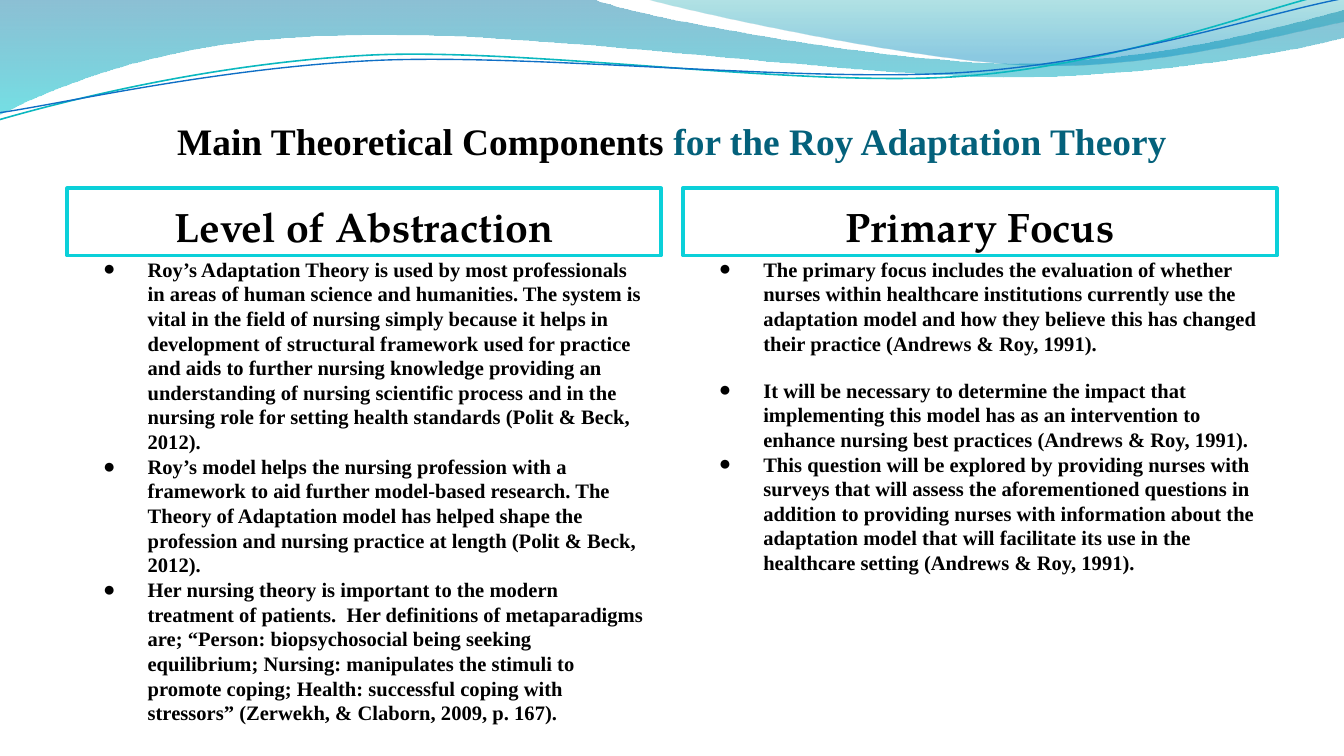
from lxml import etree
from pptx import Presentation
from pptx.dml.color import RGBColor
from pptx.enum.shapes import MSO_SHAPE
from pptx.enum.text import MSO_ANCHOR, PP_ALIGN
from pptx.oxml.ns import qn
from pptx.util import Cm, Pt

RECTANGLE = MSO_SHAPE.RECTANGLE
CENTER = PP_ALIGN.CENTER
LEFT = PP_ALIGN.LEFT
TOP = MSO_ANCHOR.TOP
MIDDLE = MSO_ANCHOR.MIDDLE

SERIF = "Times New Roman"
DISPLAY = "TeX Gyre Pagella"
BLACK, WHITE, TITLE_BLUE, FRAME = "000000", "FFFFFF", "04617B", "0BD0D9"
INSET = 0.25

# Each wave is a start point, then segments: one point is a straight line,
# three points are a Bézier curve. All in centimetres.
BACK_WAVE = [
    [(0, 0)],
    [(11.18, -0.03)],
    [(12.09, 0.33), (16.87, 1.19), (19.25, 1.19)],
    [(21.67, 1.19), (24.33, 0.48), (25.4, 0.18)],
    [(25.43, 0.69)],
    [(24.97, 0.84), (22.1, 1.45), (18.95, 1.45)],
    [(15.8, 1.42), (9.7, 0.53), (6.53, 0.66)],
    [(3.28, 0.69), (1.17, 1.57), (-0.03, 2.16)],
]
FRONT_WAVE = [
    [(12.17, -0.03)],
    [(12.93, 0.2), (17.32, 1.17), (19.53, 1.24)],
    [(21.74, 1.32), (24.41, 0.61), (25.4, 0.41)],
    [(25.4, 0)],
]
TEAL_LINE = [
    [(0, 2.26)],
    [(1.22, 1.91), (4.01, 1.19), (7.04, 1.04)],
    [(10.06, 0.91), (15.04, 1.65), (18.08, 1.45)],
    [(21.16, 1.24), (23.85, 0.15), (25.35, -0.18)],
]
BLUE_LINE = [
    [(0, 2.13)],
    [(1.19, 1.96), (4.17, 1.27), (7.19, 1.14)],
    [(10.24, 1.02), (15.16, 1.57), (18.21, 1.37)],
    [(21.23, 1.17), (23.9, 0.25), (25.4, -0.03)],
]

# Each point is its text and the space before it in points.
COLUMNS = [
    ("Level of Abstraction", [
        ("Roy’s Adaptation Theory is used by most professionals in areas of human science and "
         "humanities. The system is vital in the field of nursing simply because it helps in "
         "development of structural framework used for practice and aids to further nursing "
         "knowledge providing an understanding of nursing scientific process and in the nursing "
         "role for setting health standards (Polit & Beck, 2012).", 0),
        ("Roy’s model helps the nursing profession with a framework to aid further model-based "
         "research. The Theory of Adaptation model has helped shape the profession and nursing "
         "practice at length (Polit & Beck, 2012).", 0),
        ("Her nursing theory is important to the modern treatment of patients.  Her definitions "
         "of metaparadigms are; “Person: biopsychosocial being seeking equilibrium; Nursing: "
         "manipulates the stimuli to promote coping; Health: successful coping with stressors” "
         "(Zerwekh, & Claborn, 2009, p. 167).", 0),
    ]),
    ("Primary Focus", [
        ("The primary focus includes the evaluation of whether nurses within healthcare "
         "institutions currently use the adaptation model and how they believe this has changed "
         "their practice (Andrews & Roy, 1991).", 0),
        ("It will be necessary to determine the impact that implementing this model has as an "
         "intervention to enhance nursing best practices (Andrews & Roy, 1991).", 12),
        ("This question will be explored by providing nurses with surveys that will assess the "
         "aforementioned questions in addition to providing nurses with information about the "
         "adaptation model that will facilitate its use in the healthcare setting "
         "(Andrews & Roy, 1991).", 0),
    ]),
]


def rgb(color):
    return RGBColor.from_string(color)


def add_outline(slide, left, top, segments, close):
    """Draw the segments as straight lines, then join each triple into a Bézier curve."""
    points = [(Cm(left + x), Cm(top + y)) for segment in segments for x, y in segment]
    builder = slide.shapes.build_freeform(*points[0], scale=1.0)
    builder.add_line_segments(points[1:], close=close)
    shape = builder.convert_to_shape()
    shape.shadow.inherit = False
    lines = list(shape.element.iter(qn("a:lnTo")))
    for segment in segments[1:]:
        steps, lines = lines[:len(segment)], lines[len(segment):]
        if len(segment) == 3:
            curve = etree.Element(qn("a:cubicBezTo"))
            steps[0].addprevious(curve)
            for step in steps:
                curve.append(step[0])
                step.getparent().remove(step)
    return shape


def add_wave(slide, left, top, segments, stops):
    """Stops are (position, colour, opacity in percent), from top to bottom."""
    shape = add_outline(slide, left, top, segments, True)
    shape.line.fill.background()
    shape.fill.gradient()
    shape.fill.gradient_angle = 270
    for stop, (position, color, _) in zip(shape.fill.gradient_stops, stops):
        stop.position = position
        stop.color.rgb = rgb(color)
    for element, (_, _, opacity) in zip(shape.element.spPr.iter(qn("a:srgbClr")), stops):
        etree.SubElement(element, qn("a:alpha"), val=str(opacity * 1000))


def add_wave_line(slide, left, top, segments, color, width):
    shape = add_outline(slide, left, top, segments, False)
    shape.fill.background()
    shape.line.color.rgb = rgb(color)
    shape.line.width = Pt(width)


def add_header_waves(slide, left, top):
    add_wave(slide, left, top, BACK_WAVE, [(0, "0074A1", 45), (1, "00C6CF", 55)])
    add_wave(slide, left, top, FRONT_WAVE, [(0, "00A1A9", 30), (0.8, "008BBF", 45)])
    add_wave_line(slide, left, top, TEAL_LINE, "0AB8BF", 0.85)
    add_wave_line(slide, left, top, BLUE_LINE, "0F6FC6", 0.75)


def prepare_frame(shape, anchor):
    frame = shape.text_frame
    frame.word_wrap = True
    frame.vertical_anchor = anchor
    frame.margin_left = frame.margin_right = Cm(INSET)
    frame.margin_top = frame.margin_bottom = Cm(INSET)
    return frame


def format_run(run, font, size, color=BLACK):
    run.font.name = font
    run.font.size = Pt(size)
    run.font.bold = True
    run.font.color.rgb = rgb(color)


def add_title(slide, left, top, width, height):
    box = slide.shapes.add_textbox(Cm(left), Cm(top), Cm(width), Cm(height))
    paragraph = prepare_frame(box, MIDDLE).paragraphs[0]
    paragraph.alignment = CENTER
    for text, color in (("Main Theoretical Components", BLACK),
                        (" for the Roy Adaptation Theory", TITLE_BLUE)):
        run = paragraph.add_run()
        run.text = text
        format_run(run, SERIF, 20, color)


def add_bullet(paragraph):
    properties = paragraph._p.get_or_add_pPr()
    properties.set("marL", str(Cm(1.27)))
    properties.set("indent", str(Cm(-0.84)))
    bullet_color = etree.SubElement(properties, qn("a:buClr"))
    etree.SubElement(bullet_color, qn("a:srgbClr"), val=BLACK)
    etree.SubElement(properties, qn("a:buFont"), typeface=SERIF)
    etree.SubElement(properties, qn("a:buChar"), char="●")


def add_points(slide, left, top, width, height, points):
    box = slide.shapes.add_textbox(Cm(left), Cm(top), Cm(width), Cm(height))
    frame = prepare_frame(box, TOP)
    frame.text = "\n".join(text for text, _ in points)
    for paragraph, (_, space) in zip(frame.paragraphs, points):
        add_bullet(paragraph)
        paragraph.alignment = LEFT
        paragraph.line_spacing = 1.0
        paragraph.space_before = Pt(space)
        format_run(paragraph.runs[0], SERIF, 11)


def add_heading(slide, left, top, width, height, text):
    shape = slide.shapes.add_shape(RECTANGLE, Cm(left), Cm(top), Cm(width), Cm(height))
    shape.shadow.inherit = False
    shape.fill.solid()
    shape.fill.fore_color.rgb = rgb(WHITE)
    shape.line.color.rgb = rgb(FRAME)
    shape.line.width = Pt(2)
    etree.SubElement(shape.element.spPr.find(qn("a:ln")), qn("a:round"))
    frame = prepare_frame(shape, TOP)
    frame.text = text
    frame.paragraphs[0].alignment = CENTER
    format_run(frame.paragraphs[0].runs[0], DISPLAY, 22)


def add_column(slide, left, top, width, height, heading, points):
    body_offset = 1.04
    add_points(slide, left, top + body_offset, width - 0.05, height - body_offset, points)
    add_heading(slide, left, top, width, 1.27, heading)


def main():
    presentation = Presentation()
    presentation.slide_width, presentation.slide_height = Cm(25.4), Cm(14.29)
    slide = presentation.slides.add_slide(presentation.slide_layouts[6])
    margin, content_width, gap = 1.27, 22.86, 0.41
    column_width = (content_width - gap) / 2
    add_header_waves(slide, 0, 0)
    add_title(slide, margin, 1.47, content_width, 2.39)
    for index, (heading, points) in enumerate(COLUMNS):
        left = margin + index * (column_width + gap)
        add_column(slide, left, 3.56, column_width, 10.26, heading, points)
    presentation.save("out.pptx")


if __name__ == "__main__":
    main()
